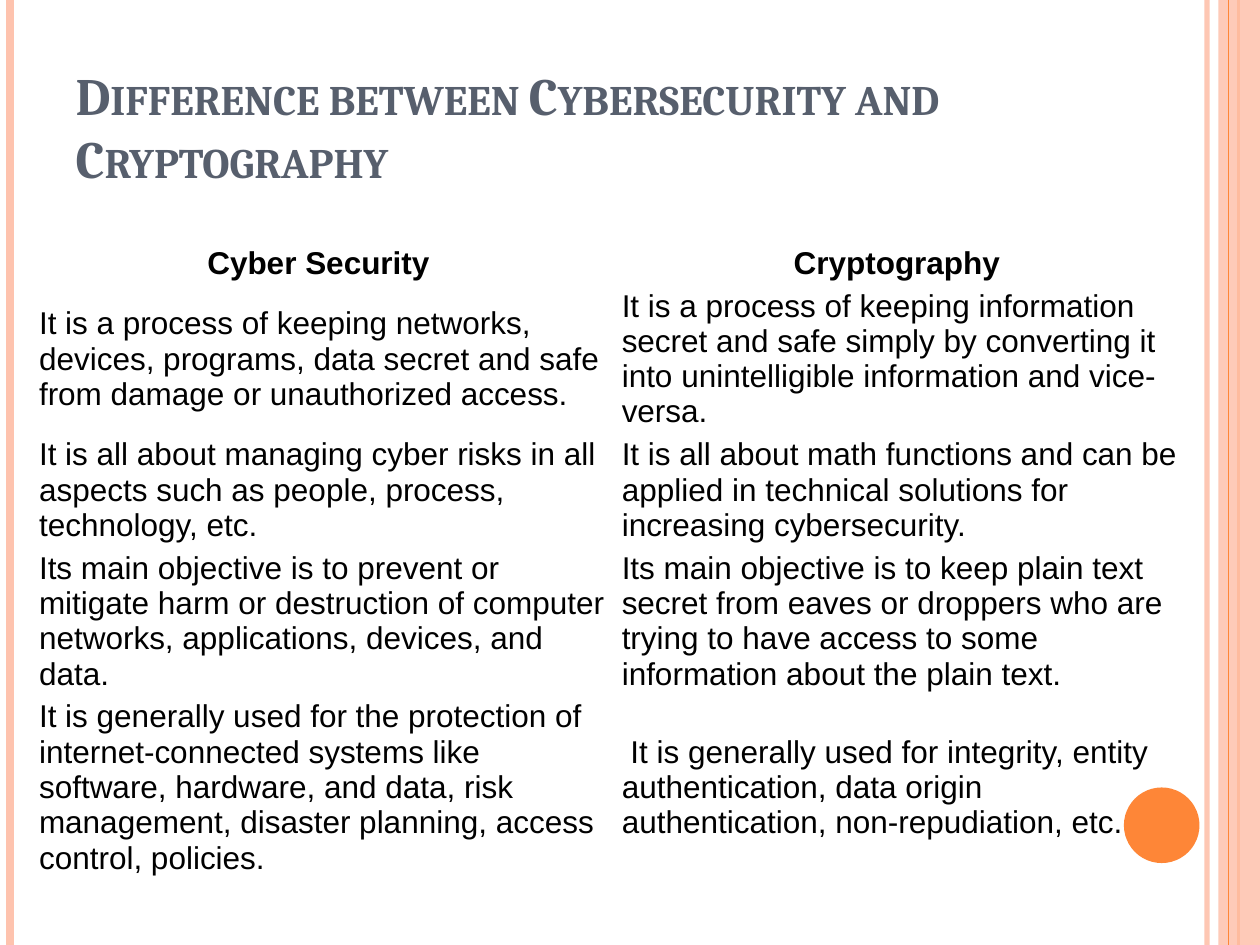
from lxml import etree
from pptx import Presentation
from pptx.dml.color import RGBColor
from pptx.enum import shapes, text
from pptx.oxml.ns import qn
from pptx.util import Inches, Pt

COLORS = {"orange": "FE8637", "peach": "FEC3AE", "slate": "575F6D", "black": "000000"}
HEADING = "Difference between Cybersecurity and Cryptography"
COMPARISON = [
    ("Cyber Security ", "Cryptography  "),
    ("It is a process of keeping networks, devices, programs, data secret and safe from damage or unauthorized access.  ",
     "It is a process of keeping information secret and safe simply by converting it into unintelligible information and vice-versa.  "),
    ("It is all about managing cyber risks in all aspects such as people, process, technology, etc.",
     "It is all about math functions and can be applied in technical solutions for increasing cybersecurity.  "),
    ("Its main objective is to prevent or mitigate harm or destruction of computer networks, applications, devices, and data.",
     "Its main objective is to keep plain text secret from eaves or droppers who are trying to have access to some information about the plain text. "),
    ("It is generally used for the protection of internet-connected systems like software, hardware, and data, risk management, disaster planning, access control, policies.  ",
     " It is generally used for integrity, entity authentication, data origin authentication, non-repudiation, etc.  "),
    ("", ""),
]
ROW_HEIGHTS = [0.31, 1.08, 0.82, 1.08, 1.34, 0.5]
STRIPES = [(9.58, "peach", 3, 93), (0.08, "peach", 4.5, 100),
           (9.83, "orange", 1.5, 100), (9.75, "orange", 0.75, 100)]
ORNAMENTS = [
    (shapes.MSO_SHAPE.RECTANGLE, (9.67, 0, 0.33, 7.5), "peach", 87),
    (shapes.MSO_SHAPE.OVAL, (8.92, 6.25, 0.6, 0.6), "orange", 100),
]
NO_STYLE_NO_GRID = "{2D5ABB26-0587-4C30-8999-92F81FD0307C}"


def rgb(name):
    return RGBColor.from_string(COLORS[name])


def paint(fill, element, color, opacity):
    fill.solid()
    fill.fore_color.rgb = rgb(color)
    if opacity < 100:
        tint = next(element.iter(qn("a:srgbClr")))
        etree.SubElement(tint, qn("a:alpha")).set("val", str(opacity * 1000))


def write(paragraph, words, font, size, color, bold):
    run = paragraph.add_run()
    run.text = words
    run.font.name, run.font.size, run.font.bold = font, Pt(size), bold
    run.font.color.rgb = rgb(color)
    return run


def add_stripe(slide, x, color, width, opacity):
    stripe = slide.shapes.add_connector(
        shapes.MSO_CONNECTOR.STRAIGHT, Inches(x), 0, Inches(x), Inches(7.5))
    stripe.line.width = Pt(width)
    properties = stripe._element.spPr
    paint(stripe.line.fill, properties, color, opacity)
    etree.SubElement(properties, qn("a:effectLst"))


def add_ornament(slide, kind, box, color, opacity):
    ornament = slide.shapes.add_shape(kind, *map(Inches, box))
    ornament.shadow.inherit = False
    paint(ornament.fill, ornament._element.spPr, color, opacity)
    ornament.line.fill.background()


def add_heading(slide):
    heading = slide.shapes.title
    heading.left, heading.top, heading.width, heading.height = map(Inches, (0.5, 0.3, 8.17, 1.25))
    frame = heading.text_frame
    frame.word_wrap = True
    frame.auto_size = text.MSO_AUTO_SIZE.NONE
    frame.vertical_anchor = text.MSO_ANCHOR.BOTTOM
    line = frame.paragraphs[0]
    line.alignment = text.PP_ALIGN.LEFT
    run = write(line, HEADING, "Cambria", 30, "slate", True)
    run._r.get_or_add_rPr().set("cap", "small")


def add_comparison(slide):
    comparison = slide.shapes.add_table(
        len(COMPARISON), 2, Inches(0.25), Inches(1.92),
        Inches(9.25), Inches(sum(ROW_HEIGHTS))).table
    comparison.horz_banding = False
    comparison._tbl.tblPr.find(qn("a:tableStyleId")).text = NO_STYLE_NO_GRID
    for r, (height, pair) in enumerate(zip(ROW_HEIGHTS, COMPARISON)):
        comparison.rows[r].height = Inches(height)
        for c, words in enumerate(pair):
            cell = comparison.cell(r, c)
            cell.fill.background()
            cell.vertical_anchor = text.MSO_ANCHOR.MIDDLE
            cell.margin_left = cell.margin_right = Inches(0.06)
            cell.margin_top = cell.margin_bottom = Inches(0.03)
            if words:
                line = cell.text_frame.paragraphs[0]
                line.alignment = text.PP_ALIGN.LEFT if r else text.PP_ALIGN.CENTER
                write(line, words, "Arial", 18, "black", r == 0)


def main():
    deck = Presentation()
    deck.slide_width, deck.slide_height = Inches(10), Inches(7.5)
    slide = deck.slides.add_slide(deck.slide_layouts[5])
    for stripe in STRIPES[:3]:
        add_stripe(slide, *stripe)
    add_ornament(slide, *ORNAMENTS[0])
    add_stripe(slide, *STRIPES[3])
    add_ornament(slide, *ORNAMENTS[1])
    add_heading(slide)
    add_comparison(slide)
    deck.save("out.pptx")


if __name__ == "__main__":
    main()
